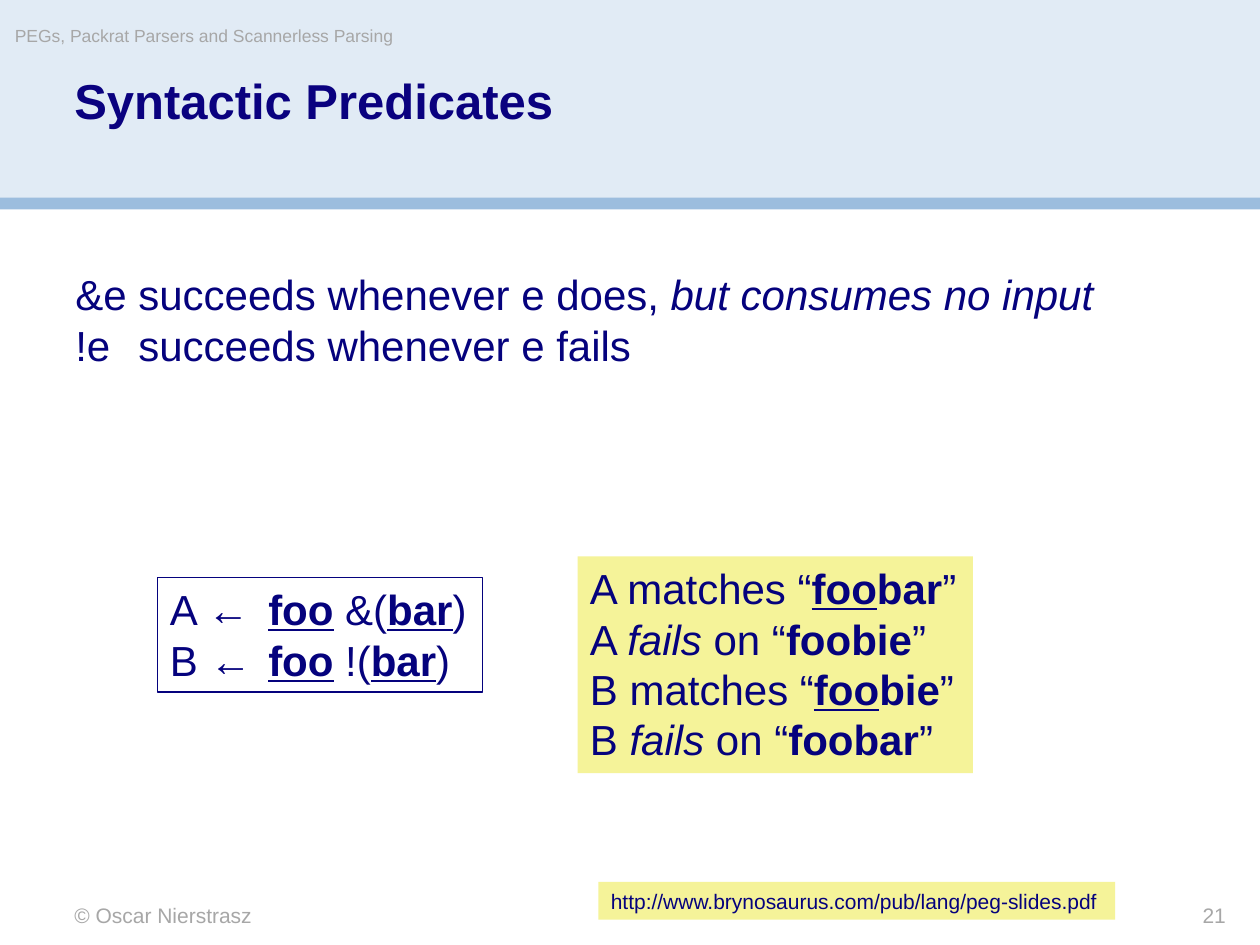
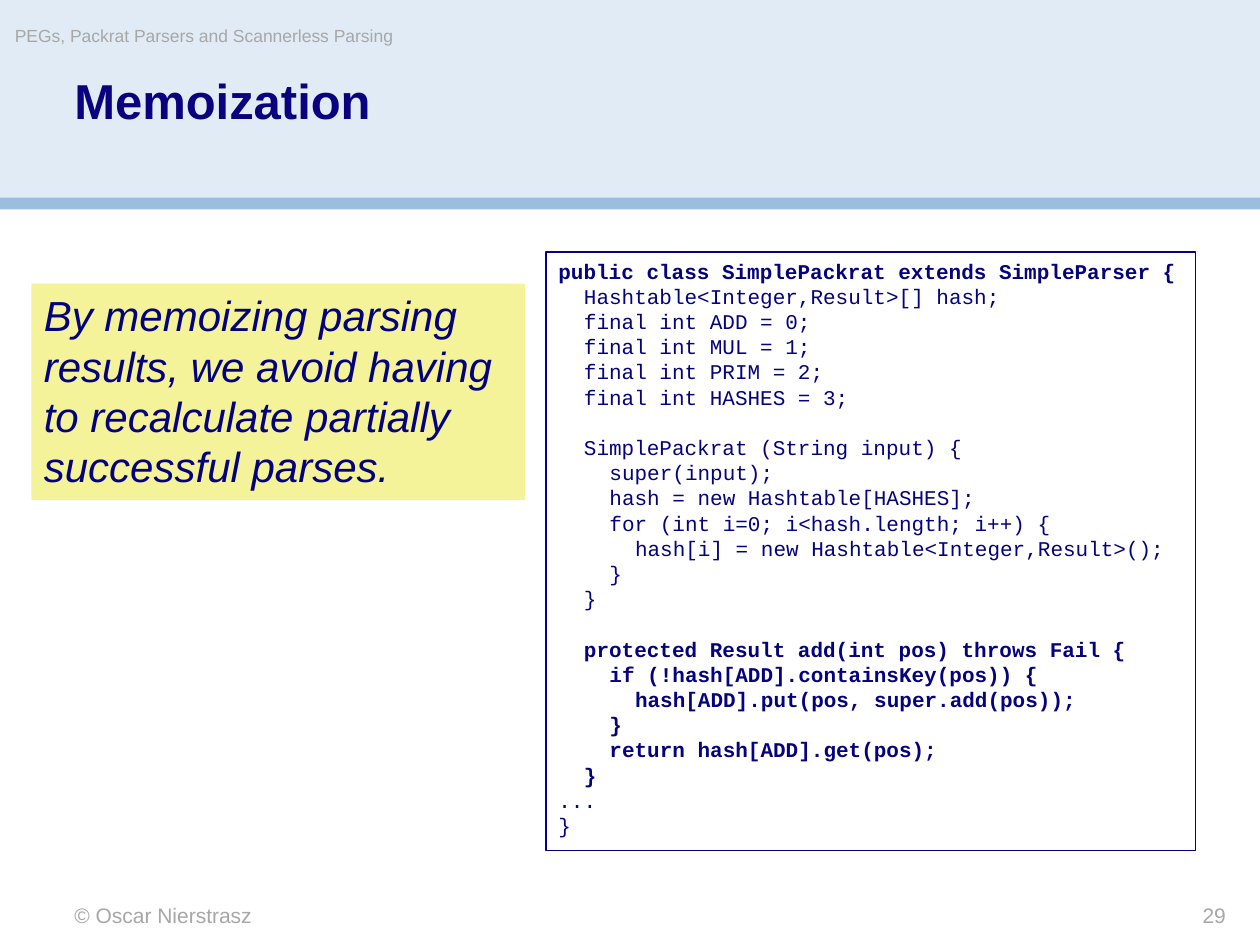
from pptx import Presentation
from pptx import util as u
from pptx.dml import color
from pptx.enum import shapes, text

NAVY = "05027D"
TITLE_NAVY = "0A017F"
GREY = "A7A7A7"
PALE_BLUE = "E1EBF5"
BAND_BLUE = "9CBDDE"
YELLOW = "F5F399"
WHITE = "FFFFFF"

PAGE_WIDTH, PAGE_HEIGHT = 720, 540
LEADING = 1.2
CODE_INDENT = 14.6
RULE_INDENT = 56.2
BOX_INSETS = (7.2, 3.6)

BODY = dict(name="Arial", size=24, color=NAVY)
SMALL = dict(BODY, size=12)
TITLE = dict(BODY, size=28, color=TITLE_NAVY, bold=True)
RUNNING_HEAD = dict(BODY, size=10, color=GREY)
FOOTER = dict(SMALL, color=GREY)
CODE = dict(SMALL, name="Courier New")
STYLES = {"b": "bold", "i": "italic", "u": "underline"}

PREDICATES = [
    [("&e\tsucceeds whenever e does, ", ""), ("but consumes no input", "i")],
    [("!e\tsucceeds whenever e fails", "")],
]
RULES = [
    [(f"{name} ←\t", ""), ("foo", "bu"), (f" {operator}(", ""), ("bar", "bu"), (")", "")]
    for name, operator in (("A", "&"), ("B", "!"))
]
CODE_LINES = [
    (0, "b", "public class SimplePackrat extends SimpleParser {"),
    (1, "", "Hashtable<Integer,Result>[] hash;"),
    (1, "", "final int ADD = 0;"),
    (1, "", "final int MUL = 1;"),
    (1, "", "final int PRIM = 2;"),
    (1, "", "final int HASHES = 3;"),
    (1, "", "SimplePackrat (String input) {"),
    (2, "", "super(input);"),
    (2, "", "hash = new Hashtable[HASHES];"),
    (2, "", "for (int i=0; i<hash.length; i++) {"),
    (3, "", "hash[i] = new Hashtable<Integer,Result>();"),
    (2, "", "}"),
    (1, "", "}"),
    (1, "b", "protected Result add(int pos) throws Fail {"),
    (2, "b", "if (!hash[ADD].containsKey(pos)) {"),
    (3, "b", "hash[ADD].put(pos, super.add(pos));"),
    (2, "b", "}"),
    (2, "b", "return hash[ADD].get(pos);"),
    (1, "b", "}"),
    (0, "", "..."),
    (0, "", "}"),
]
METHOD_STARTS = ("SimplePackrat", "protected")


def rgb(hex_colour):
    return color.RGBColor.from_string(hex_colour)


def matches(rule, consumed, rest):
    return [(f"{rule} matches “", ""), (consumed, "bu"), (rest, "b"), ("”", "")]


def fails(rule, word):
    return [(f"{rule} ", ""), ("fails", "i"), (" on “", ""), (word, "b"), ("”", "")]


def format_run(run, font_format, flags):
    values = dict(font_format)
    run.font.color.rgb = rgb(values.pop("color"))
    values["size"] = u.Pt(values["size"])
    values.update({STYLES[flag]: True for flag in flags})
    for attribute, value in values.items():
        setattr(run.font, attribute, value)


def write(holder, lines, font_format, insets=(0, 0), leading=LEADING,
          align=text.PP_ALIGN.LEFT):
    frame = holder.text_frame
    across, down = (u.Pt(inset) for inset in insets)
    settings = dict(word_wrap=True, vertical_anchor=text.MSO_ANCHOR.TOP,
                    margin_left=across, margin_right=across,
                    margin_top=down, margin_bottom=down)
    for attribute, value in settings.items():
        setattr(frame, attribute, value)
    for number, line in enumerate(lines):
        paragraph = frame.add_paragraph() if number else frame.paragraphs[0]
        paragraph.alignment = align
        paragraph.line_spacing = u.Pt(round(leading * font_format["size"], 1))
        for words, flags in line:
            run = paragraph.add_run()
            run.text = words
            format_run(run, font_format, flags)
    return frame.paragraphs


def indent(paragraph, left, first=0):
    properties = paragraph._p.get_or_add_pPr()
    properties.set("marL", str(u.Pt(left)))
    properties.set("indent", str(u.Pt(first)))


def add_label(slide, place, words, font_format, **options):
    label = slide.shapes.add_textbox(*map(u.Pt, place))
    write(label, [[(words, "")]], font_format, **options)


def add_box(slide, place, fill=None, outline=None):
    box = slide.shapes.add_shape(shapes.MSO_SHAPE.RECTANGLE, *map(u.Pt, place))
    box.shadow.inherit = False
    if fill:
        box.fill.solid()
        box.fill.fore_color.rgb = rgb(fill)
    else:
        box.fill.background()
    if outline:
        box.line.color.rgb = rgb(outline)
        box.line.width = u.Pt(0.75)
    else:
        box.line.fill.background()
    return box


def add_text_box(slide, place, lines, font_format, fill=None, outline=None):
    box = add_box(slide, place, fill, outline)
    return write(box, lines, font_format, BOX_INSETS)


def add_page(deck, title, number):
    slide = deck.slides.add_slide(deck.slide_layouts[6])
    add_box(slide, (0, 0, PAGE_WIDTH, 113.8), PALE_BLUE)
    add_box(slide, (0, 113, PAGE_WIDTH, 6.7), BAND_BLUE)
    add_label(slide, (42.5, 44, 636, 64), title, TITLE, leading=0.9 * LEADING)
    add_label(slide, (42.5, 515.5, 300, 14.4), "© Oscar Nierstrasz", FOOTER)
    add_label(slide, (8.5, 14.4, 425, 20),
              "PEGs, Packrat Parsers and Scannerless Parsing", RUNNING_HEAD)
    add_label(slide, (594, 515.5, 106.5, 14.4), str(number), FOOTER,
              align=text.PP_ALIGN.RIGHT)
    return slide


def add_code(slide, place):
    lines = [[(code, flags)] for _, flags, code in CODE_LINES]
    paragraphs = add_text_box(slide, place, lines, CODE, WHITE, NAVY)
    for paragraph, (level, _, code) in zip(paragraphs, CODE_LINES):
        indent(paragraph, level * CODE_INDENT)
        if code.startswith(METHOD_STARTS):
            paragraph.space_before = u.Pt(LEADING * CODE["size"])


def build_predicates(deck):
    slide = add_page(deck, "Syntactic Predicates", 21)
    add_text_box(slide, (342, 504, 295.2, 21.6),
                 [[("http://www.brynosaurus.com/pub/lang/peg-slides.pdf", "")]],
                 SMALL, YELLOW)
    add_text_box(slide, (36, 150, 642, 65.5), PREDICATES, BODY)
    for rule in add_text_box(slide, (90, 330, 185.8, 65.5), RULES, BODY, outline=NAVY):
        indent(rule, RULE_INDENT, -RULE_INDENT)
    outcomes = [matches("A", "foo", "bar"), fails("A", "foobie"),
                matches("B", "foo", "bie"), fails("B", "foobar")]
    add_text_box(slide, (330, 318, 226, 123.8), outcomes, BODY, YELLOW)


def build_memoization(deck):
    slide = add_page(deck, "Memoization", 29)
    add_code(slide, (312, 144, 371, 342))
    claim = ("By memoizing parsing results, we avoid having "
             "to recalculate partially successful parses.")
    add_text_box(slide, (18, 162, 282, 123.8), [[(claim, "i")]], BODY, YELLOW)


def main():
    deck = Presentation()
    deck.slide_width, deck.slide_height = u.Pt(PAGE_WIDTH), u.Pt(PAGE_HEIGHT)
    build_predicates(deck)
    build_memoization(deck)
    deck.save("out.pptx")


if __name__ == "__main__":
    main()
